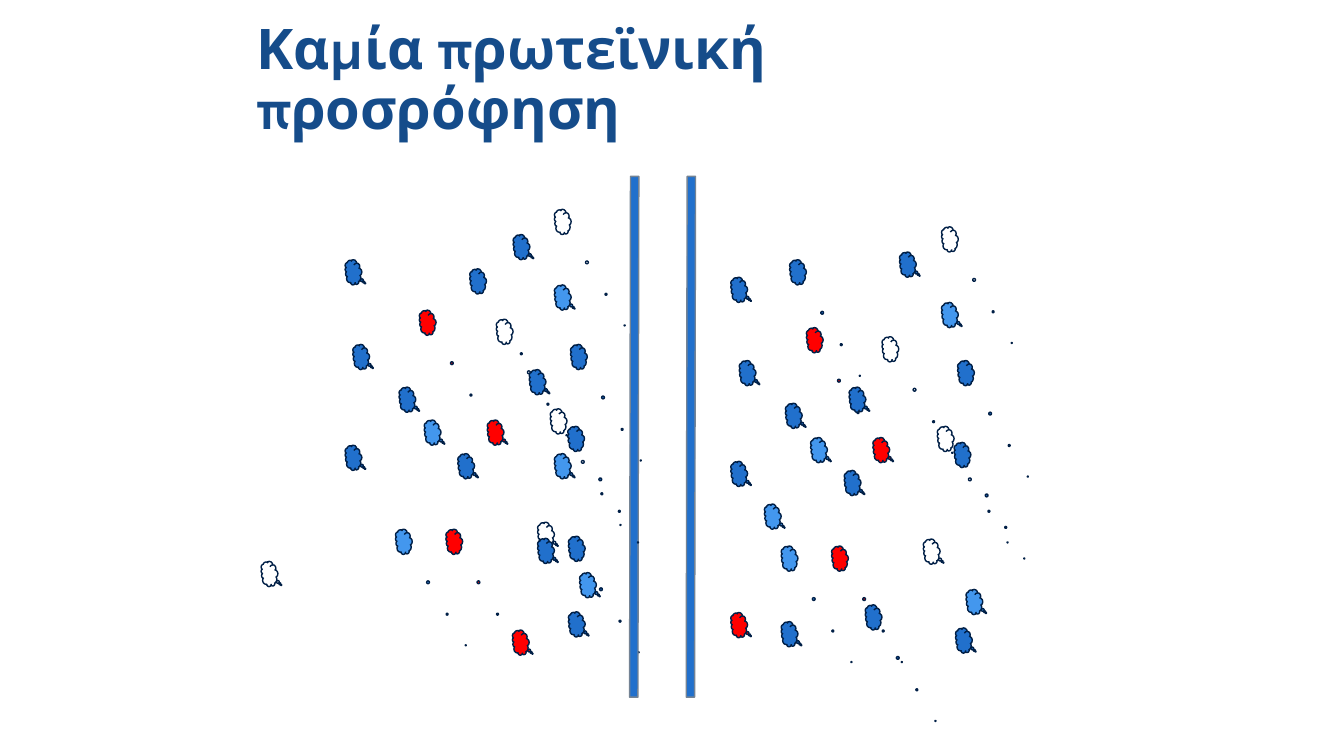
"""Build the slide on the absence of protein adsorption at a membrane."""
from typing import NamedTuple

from pptx import Presentation
from pptx.dml.color import RGBColor
from pptx.enum.shapes import MSO_SHAPE
from pptx.enum.text import MSO_ANCHOR, MSO_AUTO_SIZE, PP_ALIGN
from pptx.util import Pt

CLOUD = MSO_SHAPE.CLOUD_CALLOUT
BAR = MSO_SHAPE.RECTANGLE
MIDDLE = MSO_ANCHOR.MIDDLE
NO_AUTOFIT = MSO_AUTO_SIZE.NONE
LEFT = PP_ALIGN.LEFT

NAVY = RGBColor(0x15, 0x4C, 0x8A)
OUTLINE = RGBColor(0x00, 0x1F, 0x46)
GREY = RGBColor(0x74, 0x83, 0x94)
BLUE = RGBColor(0x21, 0x70, 0xCC)
LIGHT = RGBColor(0x43, 0x97, 0xEE)
RED = RGBColor(0xFF, 0x00, 0x00)
WHITE = RGBColor(0xFF, 0xFF, 0xFF)

FONT = "Karla"
TITLE = "Καμία πρωτεϊνική προσρόφηση"
TITLE_ONLY_LAYOUT = 5
UPRIGHT = 270.1
SHORT = (-0.438, 0.7)
LONG = (-4.104, 3.698)


class Protein(NamedTuple):
    """A protein molecule: position, colour and callout tail."""
    left: float
    top: float
    colour: RGBColor
    tail: tuple[float, float] = SHORT


class Wall(NamedTuple):
    """A membrane wall, placed before rotation."""
    left: float
    top: float


PROTEINS_BEHIND_WALLS = [
    Protein(403, 386, BLUE, LONG),
    Protein(403, 440, BLUE),
    Protein(183.5, 404, WHITE),
    Protein(315.5, 381, RED, LONG),
    Protein(411, 412, LIGHT),
    Protein(381, 376, WHITE),
    Protein(390, 295, WHITE, LONG),
    Protein(393, 327, LIGHT),
    Protein(243.5, 188.5, BLUE),
    Protein(332.5, 195, BLUE, LONG),
    Protein(300, 303, LIGHT),
    Protein(249, 249, BLUE),
]
WALLS = [Wall(267, 309), Wall(307.5, 309)]
PROTEINS_BEFORE_WALLS = [
    Protein(402.5, 307.5, BLUE, LONG),
    Protein(243.5, 321, BLUE),
    Protein(351.5, 231, WHITE, LONG),
    Protein(381, 387.5, BLUE),
    Protein(282, 279.5, BLUE),
    Protein(279.5, 381, LIGHT, LONG),
    Protein(363, 453, RED),
    Protein(296.5, 224.5, RED, LONG),
    Protein(324, 327, BLUE),
    Protein(345, 303, RED),
    Protein(404.5, 249, BLUE, LONG),
    Protein(375, 267, BLUE),
    Protein(393, 152.5, WHITE, LONG),
    Protein(393, 206.5, LIGHT),
    Protein(363.5, 170.5, BLUE),
    Protein(615, 435, BLUE, LONG),
    Protein(679.5, 451.5, BLUE),
    Protein(591, 393, RED, LONG),
    Protein(687, 424, LIGHT),
    Protein(656.5, 388, WHITE),
    Protein(666.5, 307.5, WHITE, LONG),
    Protein(543, 363, LIGHT),
    Protein(519, 201, BLUE),
    Protein(561, 188.5, BLUE, LONG),
    Protein(576, 315.5, LIGHT),
    Protein(525, 260.5, BLUE),
    Protein(678.5, 319, BLUE, LONG),
    Protein(519, 332.5, BLUE),
    Protein(627, 243.5, WHITE, LONG),
    Protein(555, 447, BLUE),
    Protein(558, 291, BLUE),
    Protein(555, 393, LIGHT, LONG),
    Protein(519, 440.5, RED),
    Protein(573, 237, RED, LONG),
    Protein(600, 339, BLUE),
    Protein(620.5, 315.5, RED),
    Protein(681, 260.5, BLUE, LONG),
    Protein(603.5, 279.5, BLUE),
    Protein(669.5, 165, WHITE, LONG),
    Protein(669.5, 219, LIGHT),
    Protein(639.5, 183, BLUE),
]


def paint(shape, fill: RGBColor, line: RGBColor) -> None:
    """Turn a shape upright and set its fill and outline."""
    shape.rotation = UPRIGHT
    shape.shadow.inherit = False
    shape.fill.solid()
    shape.fill.fore_color.rgb = fill
    shape.line.color.rgb = line
    shape.line.width = Pt(1)


def draw_proteins(page, proteins: list[Protein]) -> None:
    """Draw protein molecules from back to front."""
    for protein in proteins:
        cloud = page.shapes.add_shape(
            CLOUD, Pt(protein.left), Pt(protein.top), Pt(18), Pt(12))
        cloud.adjustments[0], cloud.adjustments[1] = protein.tail
        paint(cloud, protein.colour, OUTLINE)


def draw_walls(page, walls: list[Wall]) -> None:
    """Draw the membrane walls as one group."""
    membrane = page.shapes.add_group_shape()
    for wall in walls:
        bar = membrane.shapes.add_shape(
            BAR, Pt(wall.left), Pt(wall.top), Pt(372), Pt(6))
        paint(bar, BLUE, GREY)


def write_title(page) -> None:
    """Place and format the slide title."""
    box = page.shapes.title
    box.left, box.top, box.width, box.height = Pt(183), Pt(7), Pt(594), Pt(102)
    frame = box.text_frame
    frame.word_wrap = True
    frame.auto_size = NO_AUTOFIT
    frame.vertical_anchor = MIDDLE
    frame.margin_left = frame.margin_right = Pt(0)
    frame.margin_top = frame.margin_bottom = Pt(0)
    para = frame.paragraphs[0]
    para.alignment = LEFT
    para.line_spacing = 0.9
    para.space_before = Pt(0)
    span = para.add_run()
    span.text = TITLE
    span.font.name = FONT
    span.font.size = Pt(40)
    span.font.bold = True
    span.font.color.rgb = NAVY


def main() -> None:
    """Build and save the deck."""
    deck = Presentation()
    deck.slide_width, deck.slide_height = Pt(960), Pt(540)
    page = deck.slides.add_slide(deck.slide_layouts[TITLE_ONLY_LAYOUT])
    write_title(page)
    draw_proteins(page, PROTEINS_BEHIND_WALLS)
    draw_walls(page, WALLS)
    draw_proteins(page, PROTEINS_BEFORE_WALLS)
    deck.save("out.pptx")


if __name__ == "__main__":
    main()
